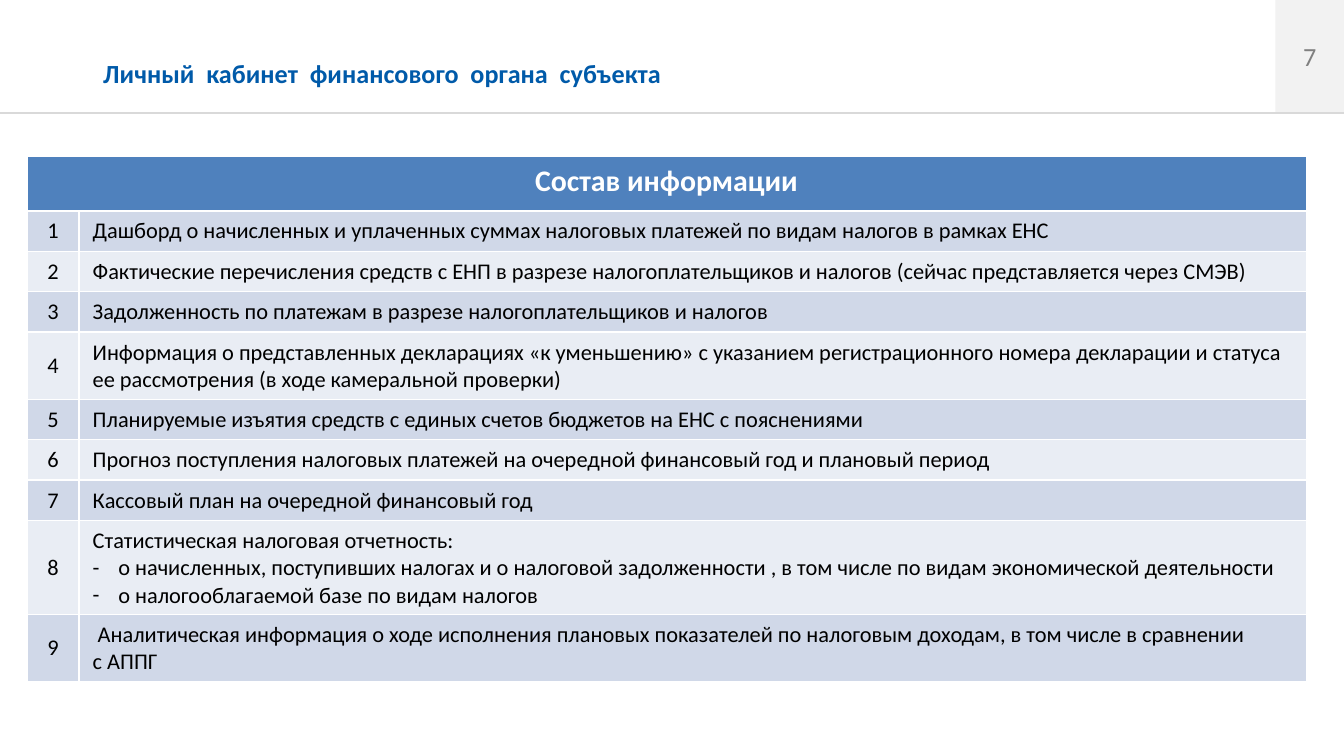
from lxml import etree
from pptx import Presentation
from pptx import util as u
from pptx.dml.color import RGBColor
from pptx.enum import shapes, text
from pptx.oxml import ns

INK = {
    "title": "005AA9", "head": "4F81BD", "odd": "D0D8E8", "even": "E9EDF4",
    "tab": "F2F2F2", "page": "808080", "rule": "D9D9D9",
    "white": "FFFFFF", "black": "000000",
}
ROWS = [
    "Дашборд о начисленных и уплаченных суммах налоговых платежей по видам налогов в рамках ЕНС",
    "Фактические перечисления средств с ЕНП в разрезе налогоплательщиков и налогов (сейчас представляется через СМЭВ)",
    "Задолженность по платежам в разрезе налогоплательщиков и налогов",
    "Информация о представленных декларациях «к уменьшению» с указанием регистрационного номера декларации и статуса ее рассмотрения (в ходе камеральной проверки)",
    "Планируемые изъятия средств с единых счетов бюджетов на ЕНС с пояснениями",
    "Прогноз поступления налоговых платежей на очередной финансовый год и плановый период",
    "Кассовый план на очередной финансовый год",
    "Статистическая налоговая отчетность:\n"
    "о начисленных, поступивших налогах и о налоговой задолженности , в том числе по видам экономической деятельности\n"
    "о налогооблагаемой базе по видам налогов",
    " Аналитическая информация о ходе исполнения плановых показателей по налоговым доходам, в том числе в сравнении \vс АППГ",
]
MID = text.MSO_ANCHOR.MIDDLE


def style(frame, size, ink, bold=False, center=False):
    for para in frame.paragraphs:
        para.alignment = text.PP_ALIGN.CENTER if center else text.PP_ALIGN.LEFT
        para.font.size = u.Pt(size)
        for run in para.runs:
            run.font.name = "Calibri"
            run.font.size = u.Pt(size)
            run.font.bold = bold
            run.font.color.rgb = RGBColor.from_string(INK[ink])


def paint(part, ink):
    part.fill.solid()
    part.fill.fore_color.rgb = RGBColor.from_string(INK[ink])


deck = Presentation()
deck.slide_width = u.Inches(10)
deck.slide_height = u.Inches(10 * 9 / 16)
slide = deck.slides.add_slide(deck.slide_layouts[6])

# Page number
page = slide.shapes.add_shape(
    shapes.MSO_SHAPE.RECTANGLE, u.Inches(9.49), 0, u.Inches(0.51), u.Inches(0.84))
page.shadow.inherit = False
paint(page, "tab")
page.line.fill.background()
page.text_frame.text = "7"
page.text_frame.vertical_anchor = MID
style(page.text_frame, 14, "page", center=True)

# Title
title = slide.shapes.add_textbox(
    u.Inches(0.67), u.Inches(0.23), u.Inches(9), u.Inches(0.62))
title.text_frame.word_wrap = True
title.text_frame.vertical_anchor = MID
title.text_frame.text = "Личный  кабинет  финансового  органа  субъекта"
style(title.text_frame, 14, "title", bold=True)

# Header rule
rule = slide.shapes.add_connector(
    shapes.MSO_CONNECTOR.STRAIGHT, 0, u.Inches(0.84), u.Inches(10), u.Inches(0.84))
rule.line.color.rgb = RGBColor.from_string(INK["rule"])
rule.line.width = u.Pt(0.75)
etree.SubElement(rule._element.spPr, ns.qn("a:effectLst"))

# Table: rows grow to fit their text, the default style draws white borders
table = slide.shapes.add_table(
    len(ROWS) + 1, 2, u.Inches(0.2), u.Inches(1.16),
    u.Inches(9.53), u.Inches(3.91)).table
for col, width in zip(table.columns, (0.39, 9.13)):
    col.width = u.Inches(width)
for i, row in enumerate(table.rows):
    row.height = u.Inches(0.2 if i else 0.41)

# Table header
head = table.cell(0, 0)
head.merge(table.cell(0, 1))
head.text_frame.text = "Состав информации"
style(head.text_frame, 16, "white", bold=True, center=True)
paint(head, "head")

# Numbered rows
for i, words in enumerate(ROWS, 1):
    num, body = table.cell(i, 0), table.cell(i, 1)
    num.text_frame.text = str(i)
    num.vertical_anchor = MID
    body.text_frame.text = words
    for para in body.text_frame.paragraphs[1:]:
        props = para._p.get_or_add_pPr()
        props.set("marL", str(u.Inches(0.19)))
        props.set("indent", str(-u.Inches(0.19)))
        etree.SubElement(props, ns.qn("a:buFont"), typeface="Calibri")
        etree.SubElement(props, ns.qn("a:buChar"), char="-")
    style(num.text_frame, 12, "black", center=True)
    style(body.text_frame, 12, "black")
    for cell in (num, body):
        paint(cell, "odd" if i % 2 else "even")

deck.save("out.pptx")
